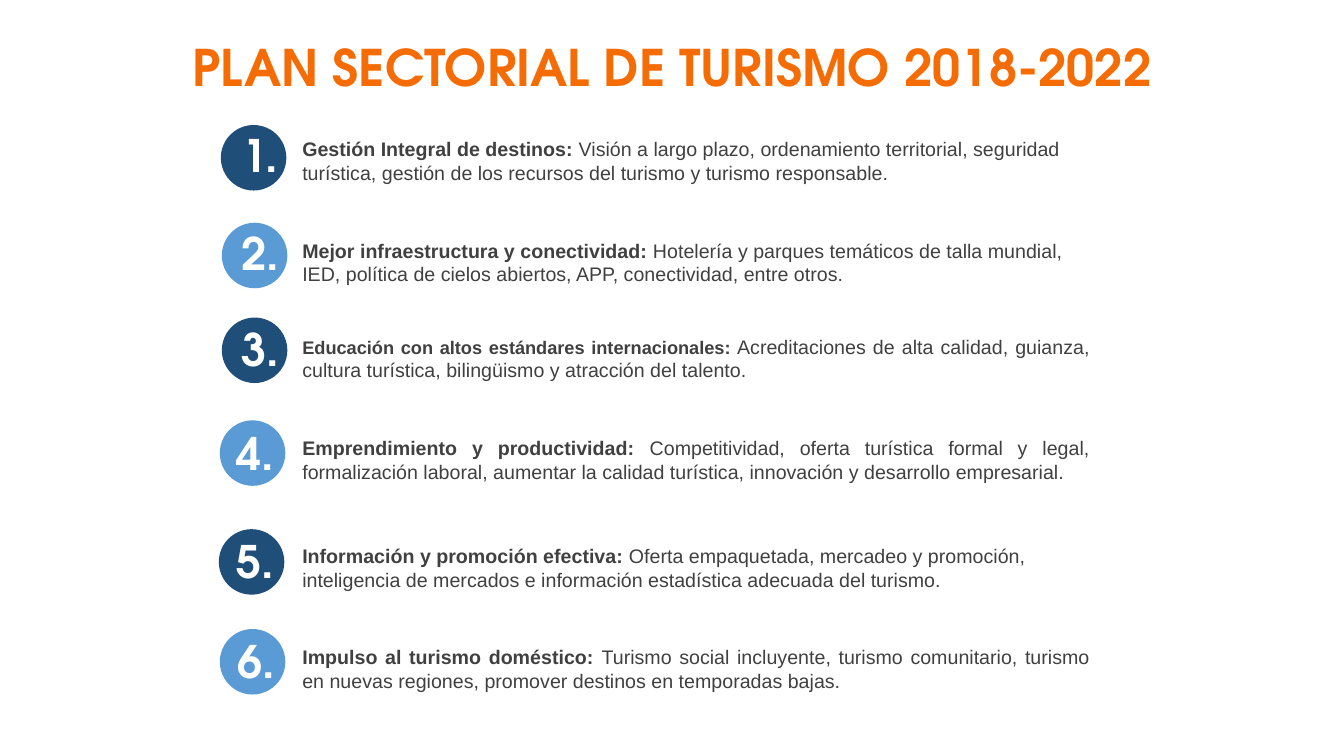
from pptx import Presentation
from pptx.dml.color import RGBColor
from pptx.enum import shapes, text
from pptx.util import Inches, Pt

ORANGE = RGBColor(0xF5, 0x6C, 0x05)
NAVY = RGBColor(0x1F, 0x4E, 0x79)
BLUE = RGBColor(0x5B, 0x9B, 0xD5)
GRAY = RGBColor(0x40, 0x40, 0x40)
WHITE = RGBColor(0xFF, 0xFF, 0xFF)
HEADING_FONT = "TeX Gyre Adventor"
BODY_FONT = "Arial"
LEFT, JUSTIFY = text.PP_ALIGN.LEFT, text.PP_ALIGN.JUSTIFY


def format_run(run, font_name, size, color, bold):
    run.font.name = font_name
    run.font.size = Pt(size)
    run.font.color.rgb = color
    run.font.bold = bold


presentation = Presentation()
presentation.slide_width = Inches(13.33)
presentation.slide_height = Inches(7.5)
slide = presentation.slides.add_slide(presentation.slide_layouts[5])

# Title
title = slide.shapes.title
title.left, title.top = Inches(1.66), Inches(0.29)
title.width, title.height = Inches(10.01), Inches(0.74)
frame = title.text_frame
frame.text = "PLAN SECTORIAL DE TURISMO 2018-2022"
frame.word_wrap = True
frame.auto_size = text.MSO_AUTO_SIZE.NONE
frame.vertical_anchor = text.MSO_ANCHOR.TOP
frame.margin_left = frame.margin_right = Inches(0.13)
frame.margin_top = frame.margin_bottom = Inches(0.07)
frame.paragraphs[0].alignment = text.PP_ALIGN.CENTER
format_run(frame.paragraphs[0].runs[0], HEADING_FONT, 36, ORANGE, True)

# Strategies: circle left and top, number left and top,
# description top, width and alignment, heading size, heading, detail
strategies = [
    (2.19, 1.24, 2.13, 1.28, 1.31, 8.36, LEFT, 14, "Gestión Integral de destinos: ",
     "Visión a largo plazo, ordenamiento territorial, seguridad turística, "
     "gestión de los recursos del turismo y turismo responsable."),
    (2.2, 2.21, 2.13, 2.25, 2.32, 8.14, LEFT, 14, "Mejor infraestructura y conectividad: ",
     "Hotelería y parques temáticos de talla mundial, IED, "
     "política de cielos abiertos, APP, conectividad, entre otros."),
    (2.2, 3.15, 2.13, 3.2, 3.27, 8.01, JUSTIFY, 13,
     "Educación con altos estándares internacionales: ",
     "Acreditaciones de alta calidad, guianza, cultura turística, "
     "bilingüismo y atracción del talento."),
    (2.18, 4.17, 2.08, 4.23, 4.28, 8.01, JUSTIFY, 14, "Emprendimiento y productividad: ",
     "Competitividad, oferta turística formal y legal, formalización laboral, "
     "aumentar la calidad turística, innovación y desarrollo empresarial."),
    (2.17, 5.25, 2.08, 5.31, 5.35, 8.36, LEFT, 14, "Información y promoción efectiva: ",
     "Oferta empaquetada, mercadeo y promoción, inteligencia de mercados "
     "e información estadística adecuada del turismo."),
    (2.18, 6.24, 2.09, 6.3, 6.35, 8.01, JUSTIFY, 14, "Impulso al turismo doméstico: ",
     "Turismo social incluyente, turismo comunitario, turismo en nuevas regiones, "
     "promover destinos en temporadas bajas."),
]

for number, strategy in enumerate(strategies, start=1):
    (circle_left, circle_top, number_left, number_top,
     top, width, alignment, heading_size, heading, detail) = strategy

    # Numbered circle, in alternating colours
    badge = slide.shapes.add_group_shape()
    circle = badge.shapes.add_shape(
        shapes.MSO_SHAPE.OVAL, Inches(circle_left), Inches(circle_top),
        Inches(0.65), Inches(0.65))
    circle.shadow.inherit = False
    circle.fill.solid()
    circle.fill.fore_color.rgb = NAVY if number % 2 else BLUE
    circle.line.fill.background()

    number_box = badge.shapes.add_textbox(
        Inches(number_left), Inches(number_top), Inches(0.9), Inches(0.58))
    number_box.text_frame.word_wrap = True
    paragraph = number_box.text_frame.paragraphs[0]
    paragraph.text = f"{number}."
    paragraph.alignment = text.PP_ALIGN.CENTER
    paragraph.line_spacing = 0.9
    format_run(paragraph.runs[0], HEADING_FONT, 32, WHITE, True)

    # Bold heading followed by its detail
    description = slide.shapes.add_textbox(
        Inches(2.9), Inches(top), Inches(width), Inches(0.57))
    description.text_frame.word_wrap = True
    description.text_frame.auto_size = text.MSO_AUTO_SIZE.SHAPE_TO_FIT_TEXT
    paragraph = description.text_frame.paragraphs[0]
    paragraph.alignment = alignment
    for words, size, bold in ((heading, heading_size, True), (detail, 14, False)):
        run = paragraph.add_run()
        run.text = words
        format_run(run, BODY_FONT, size, GRAY, bold)

presentation.save("out.pptx")
